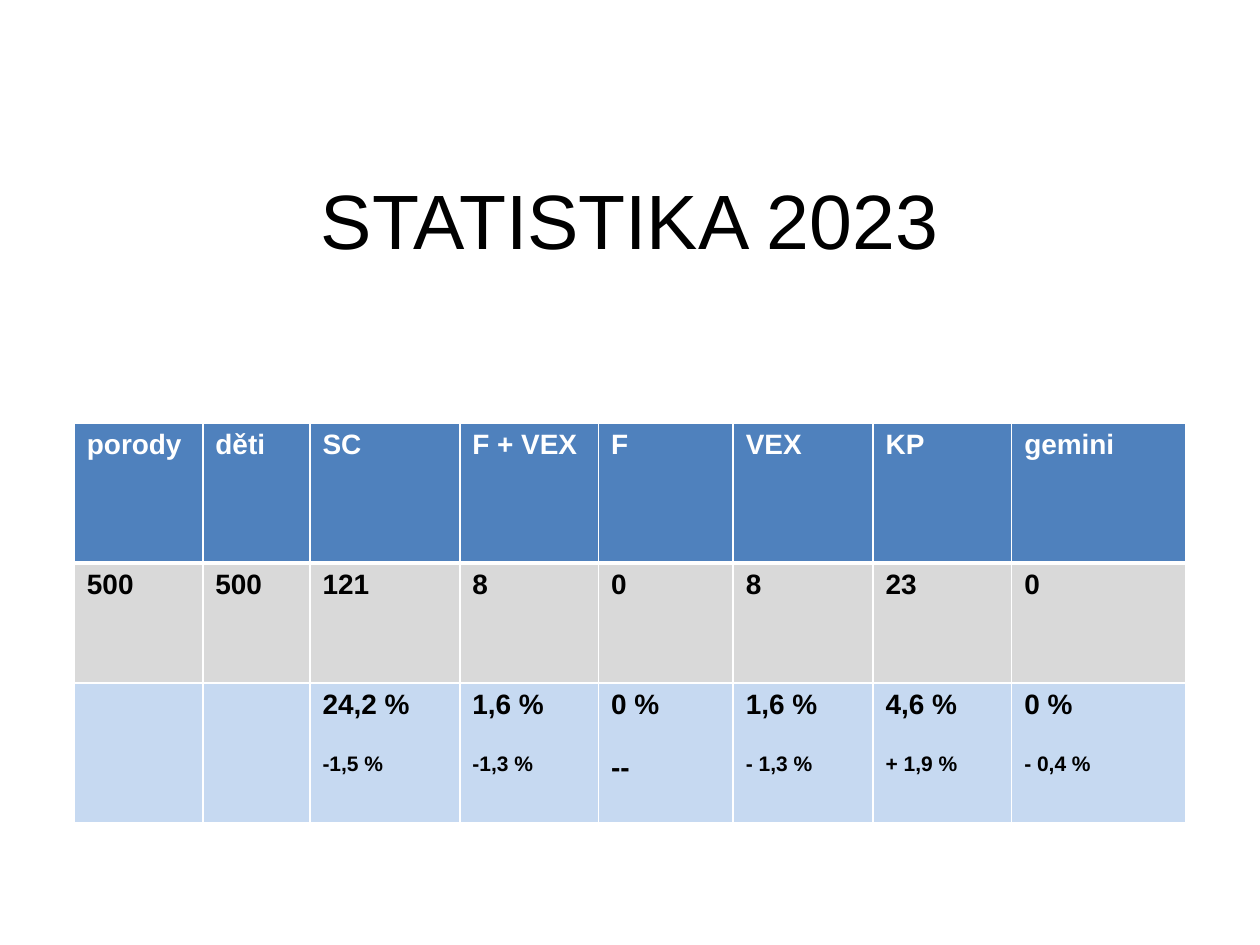
from dataclasses import dataclass

from lxml import etree
from pptx import Presentation
from pptx.dml.color import RGBColor
from pptx.enum.text import MSO_ANCHOR, PP_ALIGN
from pptx.oxml.ns import qn
from pptx.util import Inches, Pt

MIDDLE = MSO_ANCHOR.MIDDLE
CENTER = PP_ALIGN.CENTER

BLACK = RGBColor(0x00, 0x00, 0x00)
WHITE = RGBColor(0xFF, 0xFF, 0xFF)
BLUE = RGBColor(0x4F, 0x81, 0xBD)
GRAY = RGBColor(0xD9, 0xD9, 0xD9)
LIGHT_BLUE = RGBColor(0xC6, 0xD9, 0xF1)

FONT = "Arial"
SLIDE_W, SLIDE_H = Inches(10), Inches(7.5)
COLUMN_WIDTHS = (1.02, 0.85, 1.19, 1.1, 1.07, 1.11, 1.1, 1.38)
THIN, THICK = Pt(0.96), Pt(3)
LINE_GAP = Pt(18.4)  # one line of 16 pt text


@dataclass(frozen=True)
class Row:
    height: float
    fill: RGBColor
    color: RGBColor
    texts: tuple[str, ...]
    top: int = THIN
    bottom: int = THIN


ROWS = (
    Row(1.11, BLUE, WHITE,
        ("porody", "děti", "SC", "F + VEX", "F", "VEX", "KP", "gemini"),
        bottom=THICK),
    Row(0.95, GRAY, BLACK,
        ("500", "500", "121", "8", "0", "8", "23", "0"), top=THICK),
    Row(1.11, LIGHT_BLUE, BLACK,
        ("", "", "24,2 %\n-1,5 %", "1,6 %\n-1,3 %", "0 %\n--",
         "1,6 %\n- 1,3 %", "4,6 %\n+ 1,9 %", "0 %\n- 0,4 %")),
)


def style_font(font, size: float, color: RGBColor, bold: bool = False) -> None:
    font.name, font.size, font.bold = FONT, Pt(size), bold
    font.color.rgb = color


def add_title(s, text: str) -> None:
    sp = s.shapes.add_textbox(
        int(SLIDE_W * 0.075), int(SLIDE_H * 0.028),
        int(SLIDE_W * 0.85), int(SLIDE_H * 0.497))
    tf = sp.text_frame
    tf.word_wrap = True
    tf.vertical_anchor = MIDDLE
    tf.margin_left = tf.margin_right = tf.margin_top = 0
    tf.margin_bottom = int(SLIDE_H * 0.09)  # lifts the title above the centre
    tf.text = text
    p = tf.paragraphs[0]
    p.alignment = CENTER
    style_font(p.runs[0].font, 44, BLACK)


def set_borders(cell, row: Row) -> None:
    tc_pr = cell._tc.get_or_add_tcPr()
    widths = {"a:lnL": THIN, "a:lnR": THIN, "a:lnT": row.top, "a:lnB": row.bottom}
    for i, (tag, width) in enumerate(widths.items()):
        ln = etree.Element(qn(tag), w=str(int(width)))
        fill = etree.SubElement(ln, qn("a:solidFill"))
        etree.SubElement(fill, qn("a:srgbClr"), val=str(WHITE))
        tc_pr.insert(i, ln)


def fill_cell(cell, row: Row, text: str) -> None:
    cell.fill.solid()
    cell.fill.fore_color.rgb = row.fill
    set_borders(cell, row)
    cell.text_frame.text = text
    for i, p in enumerate(cell.text_frame.paragraphs):
        is_change = i > 0
        if is_change:
            p.space_before = LINE_GAP
        size = 12 if is_change and p.text != "--" else 16
        style_font(p.font, size, row.color, bold=True)
        for r in p.runs:
            style_font(r.font, size, row.color, bold=True)


def add_statistics(s) -> None:
    table = s.shapes.add_table(
        len(ROWS), len(COLUMN_WIDTHS),
        int(SLIDE_W * 0.059), int(SLIDE_H * 0.448),
        Inches(sum(COLUMN_WIDTHS)), Inches(sum(row.height for row in ROWS))).table
    for column, width in zip(table.columns, COLUMN_WIDTHS):
        column.width = Inches(width)
    for i, row in enumerate(ROWS):
        table.rows[i].height = Inches(row.height)
        for j, text in enumerate(row.texts):
            fill_cell(table.cell(i, j), row, text)


def main() -> None:
    prs = Presentation()
    prs.slide_width, prs.slide_height = SLIDE_W, SLIDE_H
    s = prs.slides.add_slide(prs.slide_layouts[6])
    # Heading
    add_title(s, "STATISTIKA 2023")
    # Birth statistics
    add_statistics(s)
    prs.save("out.pptx")


if __name__ == "__main__":
    main()
